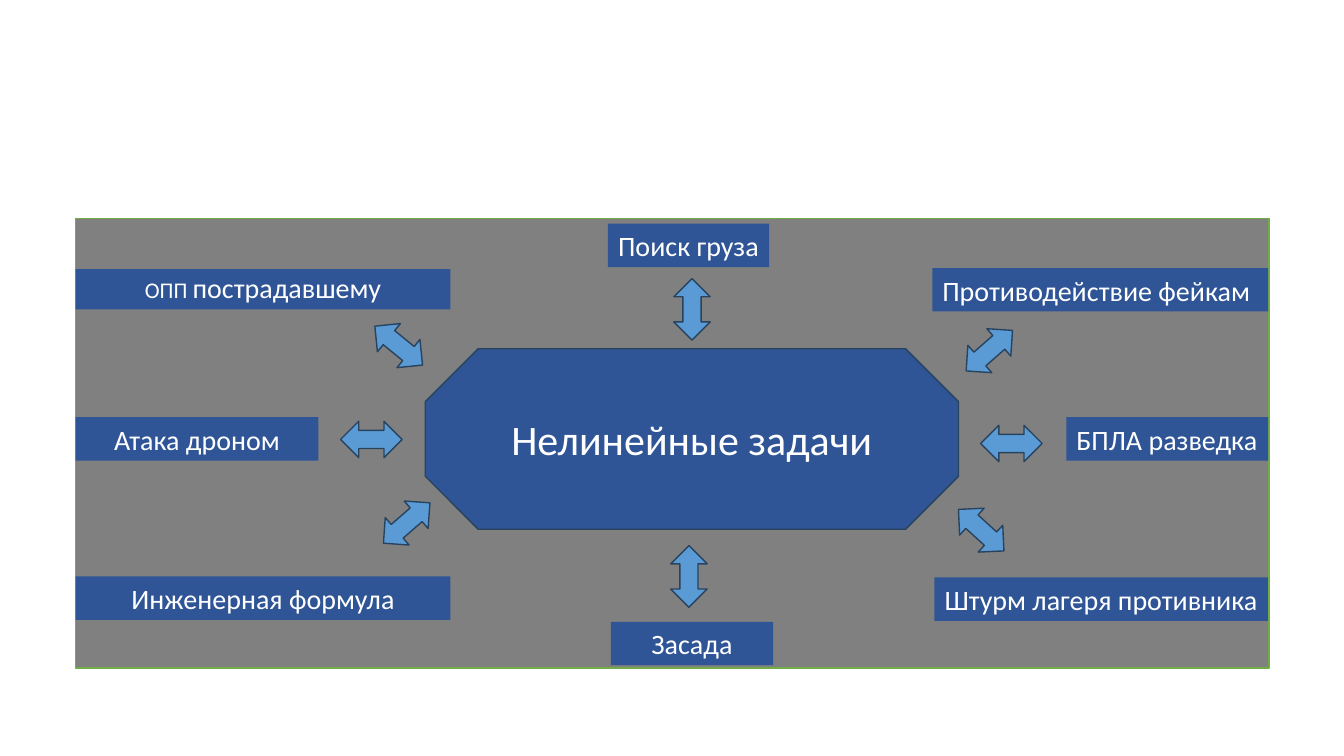
import pptx
import pptx.util
import pptx.dml.color
import pptx.enum.shapes
import pptx.enum.text

Pt = pptx.util.Pt
KIND = pptx.enum.shapes.MSO_SHAPE
ALIGN = pptx.enum.text.PP_ALIGN
FIT = pptx.enum.text.MSO_AUTO_SIZE
BLUE = "2F5597"
EDGE = "27435D"
ROW = 31

# Text, left, top, width, alignment, wrap; places are relative to the panel
LABELS = [
    ("Поиск груза", 380.2, 3.6, 115.2, ALIGN.CENTER, False),
    ("Атака дроном", 0, 141.8, 173.5, ALIGN.CENTER, True),
    ("Штурм лагеря противника", 613.4, 256.3, 238.3, ALIGN.CENTER, False),
    ("Инженерная формула", 0, 255.6, 267.8, ALIGN.CENTER, True),
    ("БПЛА разведка", 707.8, 141.8, 144, ALIGN.LEFT, False),
    ("Противодействие фейкам", 612, 35.3, 239.8, ALIGN.LEFT, True),
    ("Засада", 382.3, 288, 115.9, ALIGN.CENTER, True),
]

# Centre x, centre y, turn in degrees
ARROWS = [
    (646.9, 222.5, 42.4),
    (211.3, 157.7, 0),
    (668.5, 160.6, 0),
    (236.5, 217.4, 319),
    (652.7, 94.3, 318.8),
    (230.8, 90.7, 39.2),
    (440.3, 64.8, 90),
    (438.1, 255.6, 90),
]


def paint(color, value):
    color.rgb = pptx.dml.color.RGBColor.from_string(value)


def add_form(slide, kind, box, fill, edge=None):
    form = slide.shapes.add_shape(kind, *(Pt(side) for side in box))
    form.shadow.inherit = False
    form.fill.solid()
    paint(form.fill.fore_color, fill)
    if edge:
        paint(form.line.color, edge)
        form.line.width = Pt(1)
    else:
        form.line.fill.background()
    return form


def add_text(form, parts, align, anchor, wrap=True):
    """Write (text, size) parts as the runs of one paragraph."""
    frame = form.text_frame
    frame.word_wrap = wrap
    frame.vertical_anchor = anchor
    para = frame.paragraphs[0]
    para.alignment = align
    for text, size in parts:
        run = para.add_run()
        run.text = text
        run.font.name = "Calibri"
        run.font.size = Pt(size)
        paint(run.font.color, "FFFFFF")
    return frame


def add_hub(slide, box):
    hub = add_form(slide, KIND.OCTAGON, box, BLUE, EDGE)
    hub.adjustments[0] = 0.293
    add_text(hub, [("Нелинейные задачи", 30)], ALIGN.CENTER,
             pptx.enum.text.MSO_ANCHOR.MIDDLE)


def add_labels(slide, left, top):
    anchor = pptx.enum.text.MSO_ANCHOR.TOP
    first = add_form(slide, KIND.RECTANGLE, (left, top + 36, 267.8, 28.8), BLUE)
    frame = add_text(first, [("ОПП ", 16), ("пострадавшему", 20)],
                     ALIGN.CENTER, anchor)
    frame.paragraphs[0].line_spacing = 0.9
    for text, x, y, width, align, wrap in LABELS:
        label = add_form(slide, KIND.RECTANGLE,
                         (left + x, top + y, width, ROW), BLUE)
        frame = add_text(label, [(text, 20)], align, anchor, wrap)
        frame.auto_size = FIT.SHAPE_TO_FIT_TEXT


def add_arrows(slide, left, top):
    width, height = 44, 26
    for x, y, turn in ARROWS:
        box = (left + x - width / 2, top + y - height / 2, width, height)
        arrow = add_form(slide, KIND.LEFT_RIGHT_ARROW, box, "5B9BD5", EDGE)
        arrow.rotation = turn


def add_panel(slide, left, top, width, height):
    add_form(slide, KIND.RECTANGLE, (left, top, width, height),
             "808080", "70AD47")
    add_hub(slide, (left + 249.8, top + 92.9, 380.9, 128.9))
    add_labels(slide, left, top)
    add_arrows(slide, left, top)


def main():
    deck = pptx.Presentation()
    deck.slide_width = Pt(960)
    deck.slide_height = Pt(540)
    slide = deck.slides.add_slide(deck.slide_layouts[6])
    add_panel(slide, 54, 156.2, 852.5, 321.1)
    deck.save("out.pptx")


if __name__ == "__main__":
    main()
